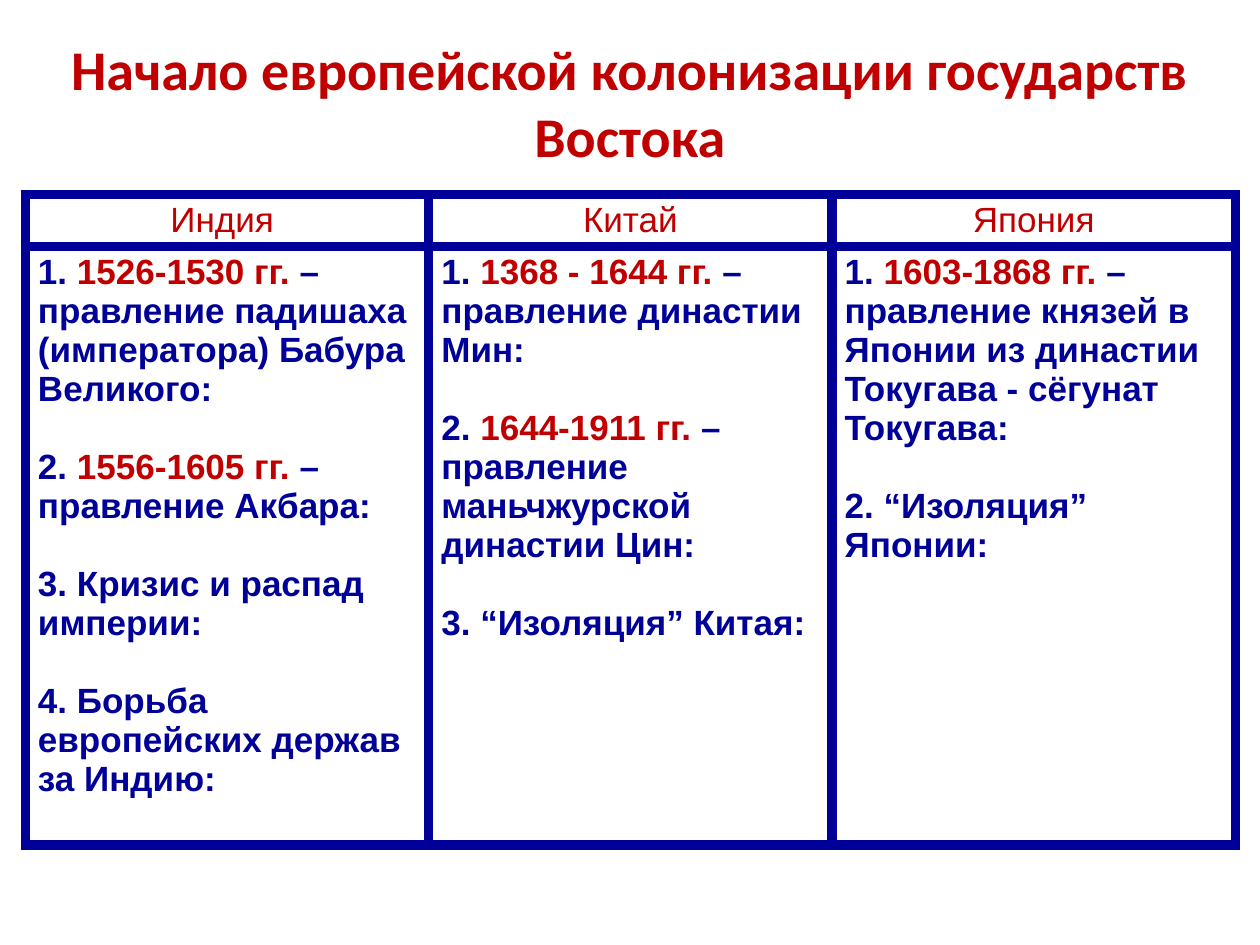
"""Build a slide comparing the start of colonization in three Eastern states."""
from dataclasses import dataclass

from lxml.etree import SubElement
from pptx import Presentation
from pptx.dml.color import RGBColor
from pptx.enum.text import MSO_ANCHOR, PP_ALIGN
from pptx.oxml.ns import qn
from pptx.util import Pt

COLORS = {"red": "C00000", "blue": "000099"}
TITLE = {"name": "Calibri", "size": Pt(32), "bold": True}
HEADER = {"name": "Arial", "size": Pt(20), "bold": False}
BODY = {"name": "Arial", "size": Pt(20), "bold": True}
COLUMN_WIDTH, HEADER_HEIGHT, BODY_HEIGHT = 230.5, 29.5, 342
ITEM_GAP, BORDER_WIDTH = 22.3, 6


@dataclass
class Item:
    text: str
    years: str = ""


@dataclass
class State:
    name: str
    items: list[Item]


STATES = [
    State("Индия ", [
        Item("– правление падишаха (императора) Бабура Великого:", "1526-1530 гг. "),
        Item("– правление Акбара:", "1556-1605 гг. "),
        Item("Кризис и распад империи:"),
        Item("Борьба европейских держав за Индию:"),
    ]),
    State("Китай", [
        Item("– правление династии Мин:", "1368 - 1644 гг. "),
        Item("– правление маньчжурской династии Цин:", "1644-1911 гг. "),
        Item("“Изоляция” Китая:"),
    ]),
    State("Япония", [
        Item("– правление князей в Японии из династии Токугава - сёгунат Токугава:",
             "1603-1868 гг. "),
        Item("“Изоляция” Японии:"),
    ]),
]


def add_span(para, text: str, style: dict, color: str) -> None:
    """Append a formatted run to a paragraph."""
    span = para.add_run()
    span.text = text
    for name, value in style.items():
        setattr(span.font, name, value)
    span.font.color.rgb = RGBColor.from_string(COLORS[color])


def format_cell(cell) -> None:
    """Give a cell thick blue borders and no fill."""
    properties = cell._tc.get_or_add_tcPr()
    for side in ("a:lnL", "a:lnR", "a:lnT", "a:lnB"):
        line = SubElement(properties, qn(side), w=str(Pt(BORDER_WIDTH)))
        fill = SubElement(line, qn("a:solidFill"))
        SubElement(fill, qn("a:srgbClr"), val=COLORS["blue"])
    cell.fill.background()


def add_title(page, text: str) -> None:
    """Add the centred slide title."""
    box = page.shapes.add_textbox(Pt(19.5), Pt(15.5), Pt(681), Pt(85))
    box.text_frame.word_wrap = True
    box.text_frame.vertical_anchor = MSO_ANCHOR.MIDDLE
    para = box.text_frame.paragraphs[0]
    para.alignment = PP_ALIGN.CENTER
    add_span(para, text, TITLE, "red")


def fill_items(cell, items: list[Item]) -> None:
    """Write numbered items with the years in red."""
    frame = cell.text_frame
    for number, item in enumerate(items, 1):
        para = frame.paragraphs[0] if number == 1 else frame.add_paragraph()
        para.space_before = Pt(0 if number == 1 else ITEM_GAP)
        if item.years:
            add_span(para, f"{number}. ", BODY, "blue")
            add_span(para, item.years, BODY, "red")
            add_span(para, item.text, BODY, "blue")
        else:
            add_span(para, f"{number}. {item.text}", BODY, "blue")


def add_states(page, states: list[State]) -> None:
    """Add the table with one column per state."""
    frame = page.shapes.add_table(
        2, len(states), Pt(14.5), Pt(111.3),
        Pt(COLUMN_WIDTH * len(states)), Pt(HEADER_HEIGHT + BODY_HEIGHT))
    table = frame.table
    for name in ("first_row", "horz_banding"):
        setattr(table, name, False)
    for row, height in zip(table.rows, (HEADER_HEIGHT, BODY_HEIGHT)):
        row.height = Pt(height)
    for index, state in enumerate(states):
        table.columns[index].width = Pt(COLUMN_WIDTH)
        header, body = table.cell(0, index), table.cell(1, index)
        format_cell(header)
        format_cell(body)
        para = header.text_frame.paragraphs[0]
        para.alignment = PP_ALIGN.CENTER
        add_span(para, state.name, HEADER, "red")
        fill_items(body, state.items)


def main() -> None:
    """Create and save the deck."""
    deck = Presentation()
    deck.slide_width, deck.slide_height = Pt(720), Pt(540)
    page = deck.slides.add_slide(deck.slide_layouts[6])
    add_states(page, STATES)
    add_title(page, "Начало европейской колонизации государств Востока")
    deck.save("out.pptx")


if __name__ == "__main__":
    main()
